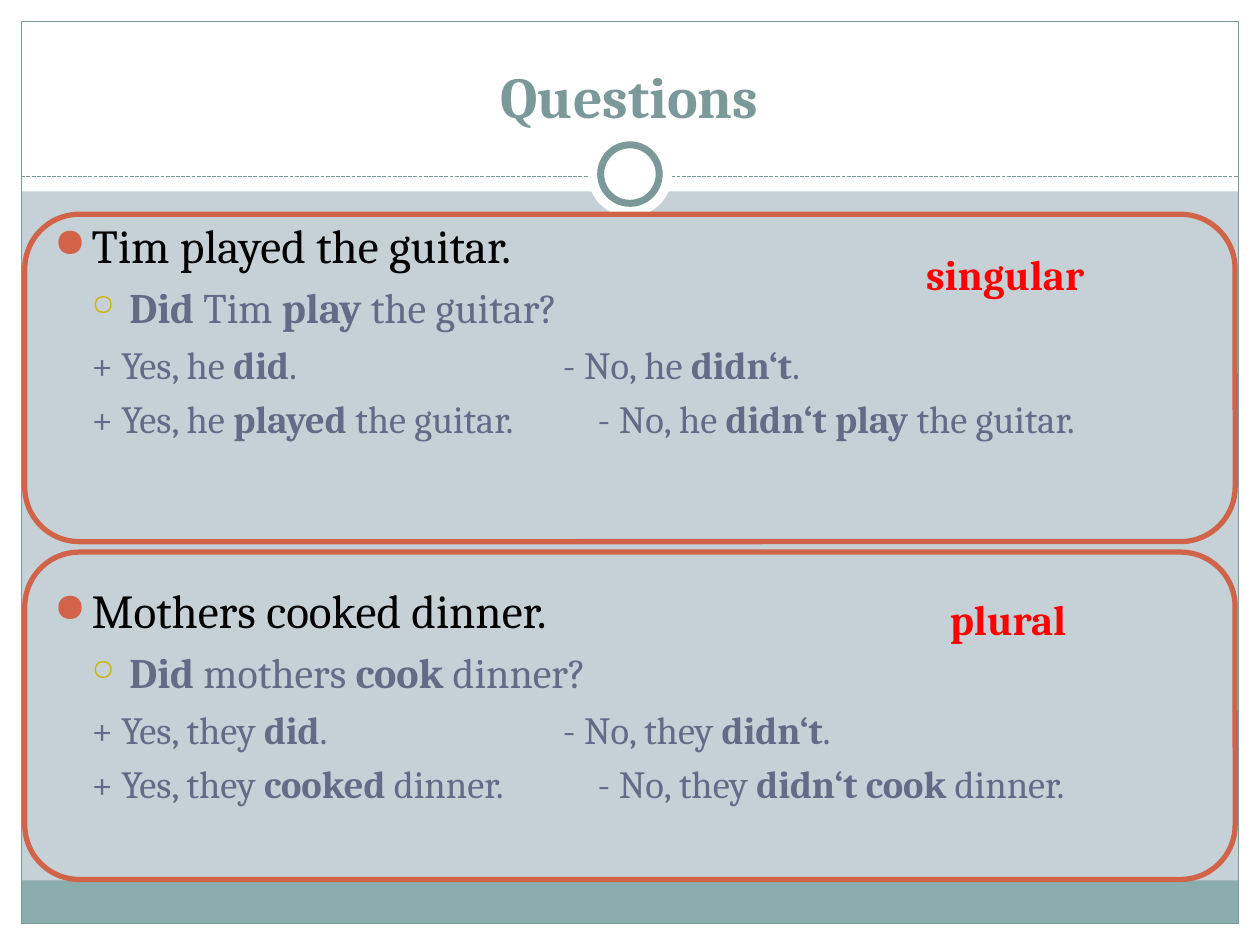
from lxml.etree import SubElement
from pptx import Presentation
from pptx.dml.color import RGBColor
from pptx.enum.dml import MSO_LINE
from pptx.enum.shapes import MSO_CONNECTOR, MSO_SHAPE
from pptx.enum.text import MSO_ANCHOR, MSO_AUTO_SIZE, PP_ALIGN
from pptx.oxml.ns import qn
from pptx.util import Cm, Pt

FONT = "Cambria"
COLORS = {
    "background": "C5D1D7", "white": "FFFFFF", "footer": "8CADAE",
    "frame": "7C999A", "panel": "D16349", "ring_bullet": "CCB400",
    "statement": "000000", "answer": "646B86", "label": "FF0000",
}
WIDTH, HEIGHT, MARGIN = 25.4, 19.05, 0.43
PANEL_TOP, PANEL_STEP, PANEL_HEIGHT = 4.32, 6.81, 6.6
TEXT_TOP, TEXT_STEP = 4.24, 7.36
ANSWER_TABS = (9.5, 10.2)

# Text between ** marks is bold.
EXAMPLES = [
    {
        "label": "singular", "label_box": (18.42, 4.88, 4.17),
        "statement": "Tim played the guitar.",
        "question": "**Did **Tim **play **the guitar?",
        "answers": ["+ Yes, he **did**.\t- No, he **didn‘t**.",
                    "+ Yes, he **played **the guitar.\t- No, he **didn‘t play **the guitar."],
    },
    {
        "label": "plural", "label_box": (18.9, 11.84, 3.2),
        "statement": "Mothers cooked dinner.",
        "question": "**Did **mothers **cook **dinner?",
        "answers": ["+ Yes, they **did**.\t- No, they **didn‘t**.",
                    "+ Yes, they **cooked **dinner.\t- No, they **didn‘t cook **dinner."],
    },
]


def rgb(name):
    return RGBColor.from_string(COLORS[name])


def add_box(s, kind, left, top, width, height, fill=None, line=None, weight=0.75):
    sp = s.shapes.add_shape(kind, Cm(left), Cm(top), Cm(width), Cm(height))
    sp.shadow.inherit = False
    if fill:
        sp.fill.solid()
        sp.fill.fore_color.rgb = rgb(fill)
    else:
        sp.fill.background()
    if line:
        sp.line.color.rgb = rgb(line)
        sp.line.width = Pt(weight)
    else:
        sp.line.fill.background()


def add_dashed_line(s, top):
    line = s.shapes.add_connector(MSO_CONNECTOR.STRAIGHT, Cm(MARGIN), Cm(top),
                                  Cm(WIDTH - MARGIN), Cm(top))
    line.line.color.rgb = rgb("frame")
    line.line.width = Pt(0.75)
    line.line.dash_style = MSO_LINE.SQUARE_DOT
    SubElement(line.element.spPr, qn("a:effectLst"))


def add_text_box(s, left, top, width, height, wrap=True):
    tf = s.shapes.add_textbox(Cm(left), Cm(top), Cm(width), Cm(height)).text_frame
    tf.word_wrap = wrap
    return tf


def write(p, text, size, color, bold=False):
    """Fill a paragraph, switching bold at each ** mark."""
    for i, part in enumerate(text.split("**")):
        if part:
            r = p.add_run()
            r.text = part
            r.font.name = FONT
            r.font.size = Pt(size)
            r.font.bold = bold or i % 2 == 1
            r.font.color.rgb = rgb(color)


def set_bullet(p, char, color, percent, indent):
    pPr = p._p.get_or_add_pPr()
    pPr.set("marL", str(Cm(indent)))
    pPr.set("indent", str(-Cm(0.76)))
    SubElement(SubElement(pPr, qn("a:buClr")), qn("a:srgbClr"), val=COLORS[color])
    SubElement(pPr, qn("a:buSzPct"), val=str(percent * 1000))
    SubElement(pPr, qn("a:buChar"), char=char)


def set_tab(p, position):
    tabs = SubElement(p._p.get_or_add_pPr(), qn("a:tabLst"))
    SubElement(tabs, qn("a:tab"), pos=str(Cm(position)), algn="l")


def add_frame(s):
    """Draw the white margins, footer band, border and header ring."""
    rect, oval = MSO_SHAPE.RECTANGLE, MSO_SHAPE.OVAL
    inner_width = WIDTH - 2 * MARGIN
    add_box(s, rect, 0, HEIGHT - MARGIN, WIDTH, MARGIN, "white")
    add_box(s, rect, 0, 0, WIDTH, 3.86, "white")
    for left in (0, WIDTH - MARGIN):
        add_box(s, rect, left, 0, MARGIN, HEIGHT, "white")
    add_box(s, rect, MARGIN, 17.75, inner_width, 0.87, "footer")
    add_box(s, rect, MARGIN, MARGIN, inner_width, HEIGHT - 2 * MARGIN, line="frame")
    add_dashed_line(s, 3.56)
    add_box(s, oval, 11.85, 2.67, 1.7, 1.7, "white")
    add_box(s, oval, 12.11, 2.92, 1.18, 1.18, "white", "frame", 4)


def set_title(s, text):
    title = s.shapes.title
    s.shapes.element.append(title.element)  # in front of the white header
    title.left, title.top, title.width, title.height = Cm(0.84), Cm(0.64), Cm(23.7), Cm(2.11)
    tf = title.text_frame
    tf.vertical_anchor = MSO_ANCHOR.BOTTOM
    p = tf.paragraphs[0]
    p.alignment = PP_ALIGN.CENTER
    write(p, text, 33, "frame", bold=True)


def add_example(s, example, top):
    tf = add_text_box(s, 0.84, top, 16.5, 2.5)
    p = tf.paragraphs[0]
    set_bullet(p, "●", "panel", 85, 0.76)
    write(p, example["statement"], 27, "statement")
    p = tf.add_paragraph()
    set_bullet(p, "○", "ring_bullet", 70, 1.52)
    p.space_before = Pt(4.8)
    write(p, example["question"], 24, "answer")

    tf = add_text_box(s, 1.6, top + 2.51, 22.8, 2.5)
    for i, (answer, tab) in enumerate(zip(example["answers"], ANSWER_TABS)):
        p = tf.add_paragraph() if i else tf.paragraphs[0]
        set_tab(p, tab)
        if i:
            p.space_before = Pt(4.4)
        write(p, answer, 22, "answer")


def add_label(s, text, left, top, width):
    tf = add_text_box(s, left, top, width, 1.27, wrap=False)
    tf.auto_size = MSO_AUTO_SIZE.SHAPE_TO_FIT_TEXT
    write(tf.paragraphs[0], text, 24, "label", bold=True)


def main():
    prs = Presentation()
    prs.slide_width, prs.slide_height = Cm(WIDTH), Cm(HEIGHT)
    s = prs.slides.add_slide(prs.slide_layouts[5])
    s.background.fill.solid()
    s.background.fill.fore_color.rgb = rgb("background")
    add_frame(s)
    set_title(s, "Questions")
    for i, example in enumerate(EXAMPLES):
        add_example(s, example, TEXT_TOP + i * TEXT_STEP)
        add_label(s, example["label"], *example["label_box"])
        add_box(s, MSO_SHAPE.ROUNDED_RECTANGLE, 0.5, PANEL_TOP + i * PANEL_STEP,
                24.4, PANEL_HEIGHT, line="panel", weight=3)
    prs.save("out.pptx")


if __name__ == "__main__":
    main()
